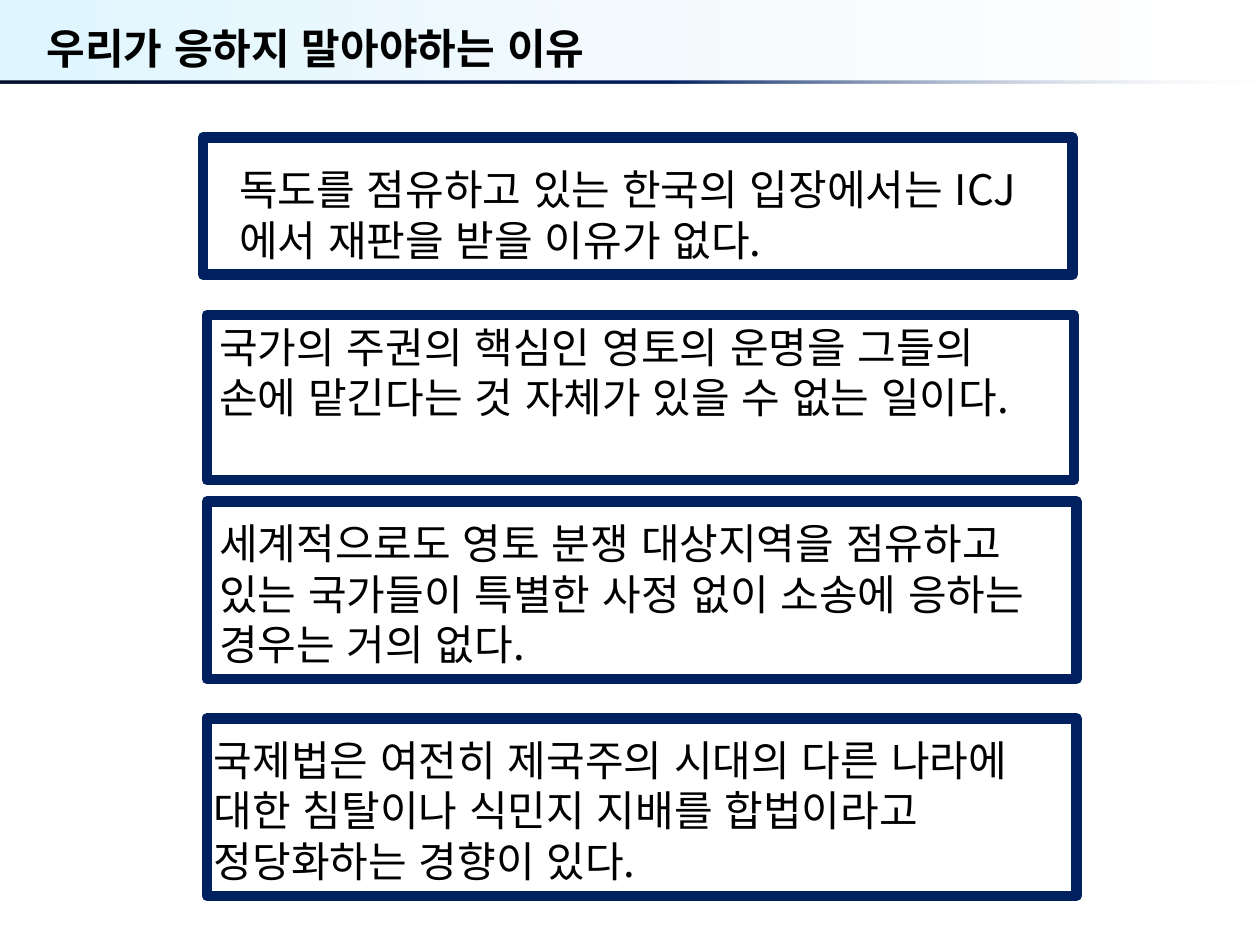
from lxml import etree
from pptx import Presentation
from pptx.dml.color import RGBColor
from pptx.enum.lang import MSO_LANGUAGE_ID
from pptx.enum.shapes import MSO_SHAPE
from pptx.enum.text import MSO_ANCHOR
from pptx.oxml import parse_xml
from pptx.oxml.ns import nsdecls, qn
from pptx.util import Cm, Pt

RECT = MSO_SHAPE.RECTANGLE
TOP, MIDDLE = MSO_ANCHOR.TOP, MSO_ANCHOR.MIDDLE
KOREAN = MSO_LANGUAGE_ID.KOREAN

# Content: places are left, top, width, height in cm
TITLE = "우리가 응하지 말아야하는 이유"
TITLE_AT = (0.69, 0.33, 22.86, 1.27)

# Each reason: frame, text area (None: inside the frame itself), words
REASONS = [
    ((4.09, 2.77, 17.53, 2.77), (4.57, 3.18, 16.46, 2.31),
     "독도를 점유하고 있는 한국의 입장에서는 ICJ에서 재판을 받을 이유가 없다."),
    ((4.17, 6.35, 17.48, 3.33), None,
     "국가의 주권의 핵심인 영토의 운명을 그들의 손에 맡긴다는 것 자체가 있을 수 없는 일이다."),
    ((4.17, 10.11, 17.53, 3.58), (4.17, 10.31, 17.86, 3.33),
     "세계적으로도 영토 분쟁 대상지역을 점유하고 있는 국가들이 특별한 사정 없이 "
     "소송에 응하는 경우는 거의 없다."),
    ((4.17, 14.48, 17.53, 3.58), (4.06, 14.68, 17.86, 3.33),
     "국제법은 여전히 제국주의 시대의 다른 나라에 대한 침탈이나 식민지 지배를 "
     "합법이라고 정당화하는 경향이 있다."),
]

THEME = {
    "font": "Noto Sans CJK KR",
    "size": Pt(24),
    "ink": RGBColor(0, 0, 0),
    "edge": RGBColor(0x00, 0x20, 0x60),
    "weight": Pt(6),
    # Gradient stops: position %, colour, opacity %
    "band": [(0, "ABE9FF", 40), (100, "E1E8F5", 0)],
    "rule": [(0, "000E2A", 100), (53, "002060", 100), (100, "E1E8F5", 0)],
}


def add_rect(slide, at):
    rect = slide.shapes.add_shape(RECT, *map(Cm, at))
    rect.shadow.inherit = False
    rect.fill.background()
    rect.line.fill.background()
    return rect


def add_fade(slide, at, stops):
    rect = add_rect(slide, at)
    marks = "".join(
        f'<a:gs pos="{pos * 1000}"><a:srgbClr val="{color}">'
        f'<a:alpha val="{alpha * 1000}"/></a:srgbClr></a:gs>'
        for pos, color, alpha in stops)
    fade = parse_xml(
        f'<a:gradFill {nsdecls("a")} rotWithShape="1"><a:gsLst>{marks}</a:gsLst>'
        '<a:lin ang="0" scaled="0"/></a:gradFill>')
    props = rect.fill._xPr
    props.replace(props.find(qn("a:noFill")), fade)


def add_frame(slide, at):
    rect = add_rect(slide, at)
    rect.line.color.rgb = THEME["edge"]
    rect.line.width = THEME["weight"]
    return rect


def add_box(slide, at):
    return slide.shapes.add_textbox(*map(Cm, at))


def write(shape, words, anchor=TOP, bold=False):
    frame = shape.text_frame
    frame.text = words
    frame.word_wrap = True
    frame.vertical_anchor = anchor
    para = frame.paragraphs[0]
    para.alignment = 1  # left
    for run in para.runs:
        font = run.font
        font.name, font.size, font.bold = THEME["font"], THEME["size"], bold
        font.color.rgb = THEME["ink"]
        font.language_id = KOREAN
        # East Asian typeface follows the Latin one
        latin = font._element.find(qn("a:latin"))
        east = etree.Element(qn("a:ea"), typeface=THEME["font"])
        latin.addnext(east)


def main():
    deck = Presentation()
    deck.slide_width, deck.slide_height = Cm(25.4), Cm(19.05)
    slide = deck.slides.add_slide(deck.slide_layouts[6])

    # Header band, rule and title
    add_fade(slide, (0, 0, 25.4, 1.65), THEME["band"])
    add_fade(slide, (0, 1.63, 25.4, 0.05), THEME["rule"])
    write(add_box(slide, TITLE_AT), TITLE, MIDDLE, bold=True)

    # Framed reasons
    for edge, area, words in REASONS:
        frame = add_frame(slide, edge)
        write(add_box(slide, area) if area else frame, words)

    deck.save("out.pptx")


if __name__ == "__main__":
    main()
